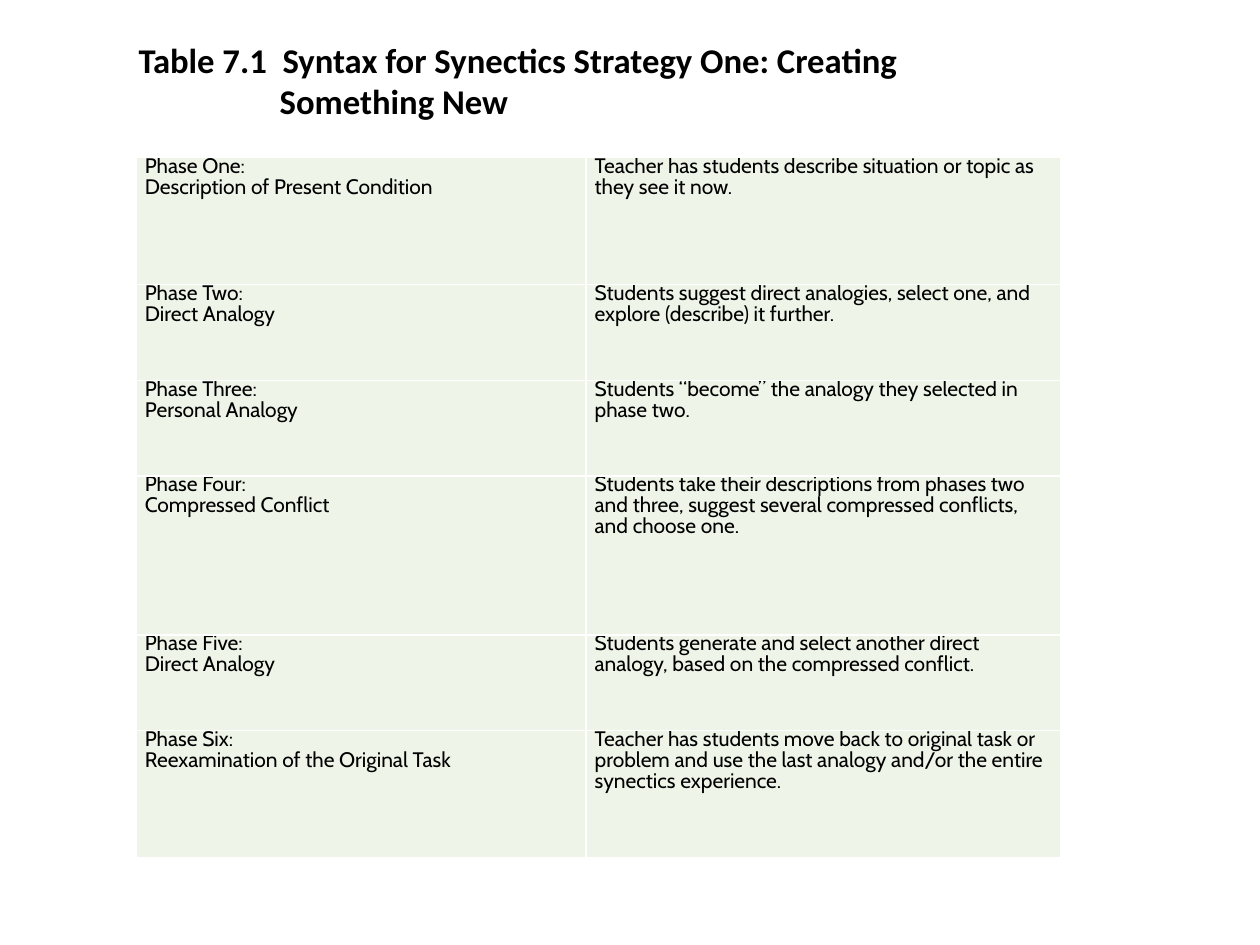
from pptx import Presentation
from pptx import util as u
from pptx.dml.color import RGBColor
from pptx.enum import text
from pptx.oxml import parse_xml
from pptx.oxml.ns import nsdecls

COL_WIDTHS = [3.57, 3.77]
ROW_HEIGHTS = [1.01, 0.76, 0.76, 1.26, 0.76, 1.01]
PHASES = [
    ("Phase One:", "Description of Present Condition",
     "Teacher has students describe situation or topic as they see it now."),
    ("Phase Two:", "Direct Analogy",
     "Students suggest direct analogies, select one, and explore (describe) it further."),
    ("Phase Three:", "Personal Analogy",
     "Students “become” the analogy they selected in phase two."),
    ("Phase Four:", "Compressed Conflict",
     "Students take their descriptions from phases two and three, "
     "suggest several compressed conflicts, and choose one."),
    ("Phase Five:", "Direct Analogy",
     "Students generate and select another direct analogy, "
     "based on the compressed conflict."),
    ("Phase Six:", "Reexamination of the Original Task",
     "Teacher has students move back to original task or problem "
     "and use the last analogy and/or the entire synectics experience."),
]


def color(value):
    return RGBColor.from_string(value)


def style_font(p, name, size, bold=False):
    p.font.name = name
    p.font.size = u.Pt(size)
    p.font.bold = bold
    p.font.color.rgb = color("000000")


def add_title(s, content):
    sp = s.shapes.add_textbox(u.Inches(0.75), u.Inches(0.27), u.Inches(7.17), u.Inches(0.73))
    tf = sp.text_frame
    tf.word_wrap = True
    tf.vertical_anchor = text.MSO_ANCHOR.MIDDLE
    tf.margin_left = u.Inches(0.35)
    tf.margin_right = tf.margin_top = tf.margin_bottom = 0
    p = tf.paragraphs[0]
    p.text = content
    style_font(p, "Calibri", 19.8, True)
    pPr = p._p.get_or_add_pPr()
    pPr.set("marL", str(u.Inches(1.12)))
    pPr.set("indent", str(u.Inches(-1.12)))


def add_borders(cell, value, width):
    tcPr = cell._tc.get_or_add_tcPr()
    for i, side in enumerate(("lnL", "lnR", "lnT", "lnB")):
        tcPr.insert(i, parse_xml(
            f'<a:{side} {nsdecls("a")} w="{u.Pt(width)}"><a:solidFill>'
            f'<a:srgbClr val="{value}"/></a:solidFill></a:{side}>'))


def fill_cell(cell, lines):
    cell.fill.solid()
    cell.fill.fore_color.rgb = color("EEF4E8")
    add_borders(cell, "FFFFFF", 1)
    cell.margin_left = cell.margin_right = u.Inches(0.07)
    cell.margin_top = cell.margin_bottom = 0
    tf = cell.text_frame
    tf.text = "\n".join(lines)
    for p in tf.paragraphs:
        p.line_spacing = u.Pt(12)
        style_font(p, "Cabin", 12)


def add_phase_table(s):
    table = s.shapes.add_table(
        len(PHASES), len(COL_WIDTHS), u.Inches(1.08), u.Inches(1.25),
        u.Inches(sum(COL_WIDTHS)), u.Inches(sum(ROW_HEIGHTS))).table
    table.first_row = table.horz_banding = False
    for column, width in zip(table.columns, COL_WIDTHS):
        column.width = u.Inches(width)
    for row, height, (phase, name, activity) in zip(table.rows, ROW_HEIGHTS, PHASES):
        row.height = u.Inches(height)
        fill_cell(row.cells[0], [phase, name])
        fill_cell(row.cells[1], [activity])


def main():
    prs = Presentation()
    prs.slide_width, prs.slide_height = u.Inches(10), u.Inches(7.5)
    s = prs.slides.add_slide(prs.slide_layouts[6])
    add_title(s, "Table 7.1  Syntax for Synectics Strategy One: Creating\vSomething New")
    add_phase_table(s)
    prs.save("out.pptx")


if __name__ == "__main__":
    main()
